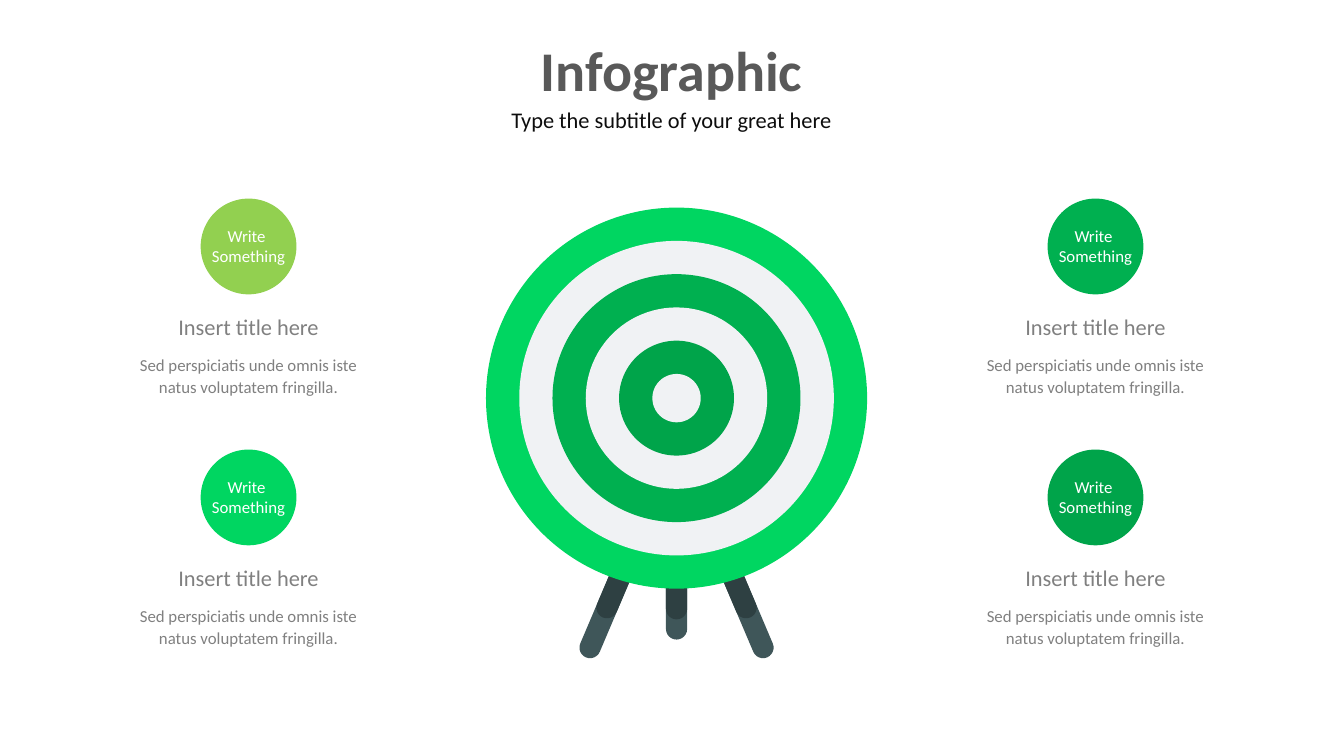
from dataclasses import dataclass
from math import cos, radians, sin

from pptx import Presentation
from pptx.dml.color import RGBColor
from pptx.enum.shapes import MSO_SHAPE
from pptx.enum.text import MSO_ANCHOR, MSO_AUTO_SIZE, PP_ALIGN
from pptx.shapes.autoshape import Shape
from pptx.shapes.shapetree import GroupShapes, SlideShapes
from pptx.text.text import TextFrame
from pptx.util import Inches, Pt

OVAL = MSO_SHAPE.OVAL
ROUNDED = MSO_SHAPE.ROUNDED_RECTANGLE
CENTER = PP_ALIGN.CENTER
TOP = MSO_ANCHOR.TOP
MIDDLE = MSO_ANCHOR.MIDDLE
NO_FIT = MSO_AUTO_SIZE.NONE
GROW = MSO_AUTO_SIZE.SHAPE_TO_FIT_TEXT


@dataclass(frozen=True)
class Theme:
    font: str = "Calibri"
    heading: str = "595959"
    subtitle: str = "0D0D0D"
    gray: str = "808080"
    white: str = "FFFFFF"
    lime: str = "92D050"
    bright: str = "00D661"
    green: str = "00B050"
    deep: str = "00A44A"
    pale: str = "F0F2F4"
    leg: str = "3F5659"
    leg_shade: str = "2E4042"
    heading_size: int = 40
    title_size: int = 16
    body_size: int = 12


@dataclass(frozen=True)
class Item:
    column: int
    row: int
    color: str


@dataclass(frozen=True)
class Leg:
    top_x: float
    top_y: float
    angle: float
    reach: float
    shade_reach: float


THEME = Theme()
ITEMS = [
    Item(0, 0, THEME.lime),
    Item(0, 1, THEME.bright),
    Item(1, 0, THEME.green),
    Item(1, 1, THEME.deep),
]
COLUMN_CENTER, COLUMN_STEP = 2.465, 8.4
ROW_TOP, ROW_STEP = 1.97, 2.49

BOARD_X, BOARD_Y = 6.71, 3.95
BOARD_SIZE, RING_STEP = 3.78, 0.66
RING_COLORS = [THEME.bright, THEME.pale, THEME.green,
               THEME.pale, THEME.deep, THEME.pale]
LEG_WIDTH = 0.21
LEGS = [
    Leg(BOARD_X - 0.44, 5.44, 23, 1.07, 0.64),
    Leg(BOARD_X + 0.44, 5.44, -23, 1.07, 0.64),
    Leg(BOARD_X, 5.51, 0, 0.73, 0.53),
]


def write_text(frame: TextFrame, text: str, *, size: int, color: str,
               bold: bool = False, spacing: float = 1.0, wrap: bool = True,
               anchor: MSO_ANCHOR = TOP,
               auto_size: MSO_AUTO_SIZE = NO_FIT) -> None:
    frame.text = text
    frame.word_wrap = wrap
    frame.auto_size = auto_size
    frame.vertical_anchor = anchor
    for paragraph in frame.paragraphs:
        paragraph.alignment = CENTER
        paragraph.line_spacing = spacing
        paragraph.space_before = Pt(0)
        for run in paragraph.runs:
            run.font.name = THEME.font
            run.font.size = Pt(size)
            run.font.bold = bold
            run.font.color.rgb = RGBColor.from_string(color)


def place(shape: Shape, left: float, top: float,
          width: float, height: float) -> None:
    shape.left, shape.top = Inches(left), Inches(top)
    shape.width, shape.height = Inches(width), Inches(height)


def add_filled(shapes: SlideShapes | GroupShapes, kind: MSO_SHAPE,
               center_x: float, center_y: float, width: float,
               height: float, color: str) -> Shape:
    shape = shapes.add_shape(kind, Inches(center_x - width / 2),
                             Inches(center_y - height / 2),
                             Inches(width), Inches(height))
    shape.fill.solid()
    shape.fill.fore_color.rgb = RGBColor.from_string(color)
    shape.line.fill.background()
    shape.shadow.inherit = False
    return shape


def add_label(shapes: SlideShapes, text: str, center_x: float, top: float,
              width: float, height: float, *, size: int, color: str,
              spacing: float = 1.0, wrap: bool = False) -> None:
    box = shapes.add_textbox(Inches(center_x - width / 2), Inches(top),
                             Inches(width), Inches(height))
    write_text(box.text_frame, text, size=size, color=color,
               spacing=spacing, wrap=wrap, auto_size=GROW)


def add_item(shapes: SlideShapes, item: Item) -> None:
    center = COLUMN_CENTER + item.column * COLUMN_STEP
    top = ROW_TOP + item.row * ROW_STEP
    add_filled(shapes, OVAL, center, top + 0.475, 0.95, 0.95, item.color)
    add_label(shapes, "Write \nSomething", center, top + 0.22, 0.94, 0.5,
              size=THEME.body_size, color=THEME.white)
    add_label(shapes, "Insert title here", center, top + 1.09, 1.61, 0.37,
              size=THEME.title_size, color=THEME.gray)
    add_label(shapes,
              "Sed perspiciatis unde omnis iste natus voluptatem fringilla.",
              center, top + 1.48, 2.57, 0.54, size=THEME.body_size,
              color=THEME.gray, spacing=1.1, wrap=True)


def add_leg(shapes: GroupShapes, leg: Leg) -> None:
    angle = radians(leg.angle)
    for reach, color in ((leg.reach, THEME.leg),
                         (leg.shade_reach, THEME.leg_shade)):
        bar = add_filled(shapes, ROUNDED,
                         leg.top_x - reach / 2 * sin(angle),
                         leg.top_y + reach / 2 * cos(angle),
                         LEG_WIDTH, reach + LEG_WIDTH, color)
        bar.adjustments[0] = 0.5
        bar.rotation = leg.angle


def main() -> None:
    presentation = Presentation()
    presentation.slide_width = Inches(13.33)
    presentation.slide_height = Inches(7.5)
    slide = presentation.slides.add_slide(presentation.slide_layouts[0])

    # Heading
    title, subtitle = slide.placeholders
    place(title, 0.57, 0.37, 12.18, 0.72)
    write_text(title.text_frame, "Infographic", size=THEME.heading_size,
               color=THEME.heading, bold=True, spacing=0.9, anchor=MIDDLE)
    place(subtitle, 0.57, 1.03, 12.18, 0.53)
    write_text(subtitle.text_frame, "Type the subtitle of your great here",
               size=THEME.title_size, color=THEME.subtitle, spacing=0.9)

    # Side items
    for item in ITEMS:
        add_item(slide.shapes, item)

    # Target on its stand
    target = slide.shapes.add_group_shape().shapes
    for leg in LEGS:
        add_leg(target, leg)
    for index, color in enumerate(RING_COLORS):
        size = BOARD_SIZE - index * RING_STEP
        add_filled(target, OVAL, BOARD_X, BOARD_Y, size, size, color)

    presentation.save("out.pptx")


if __name__ == "__main__":
    main()
